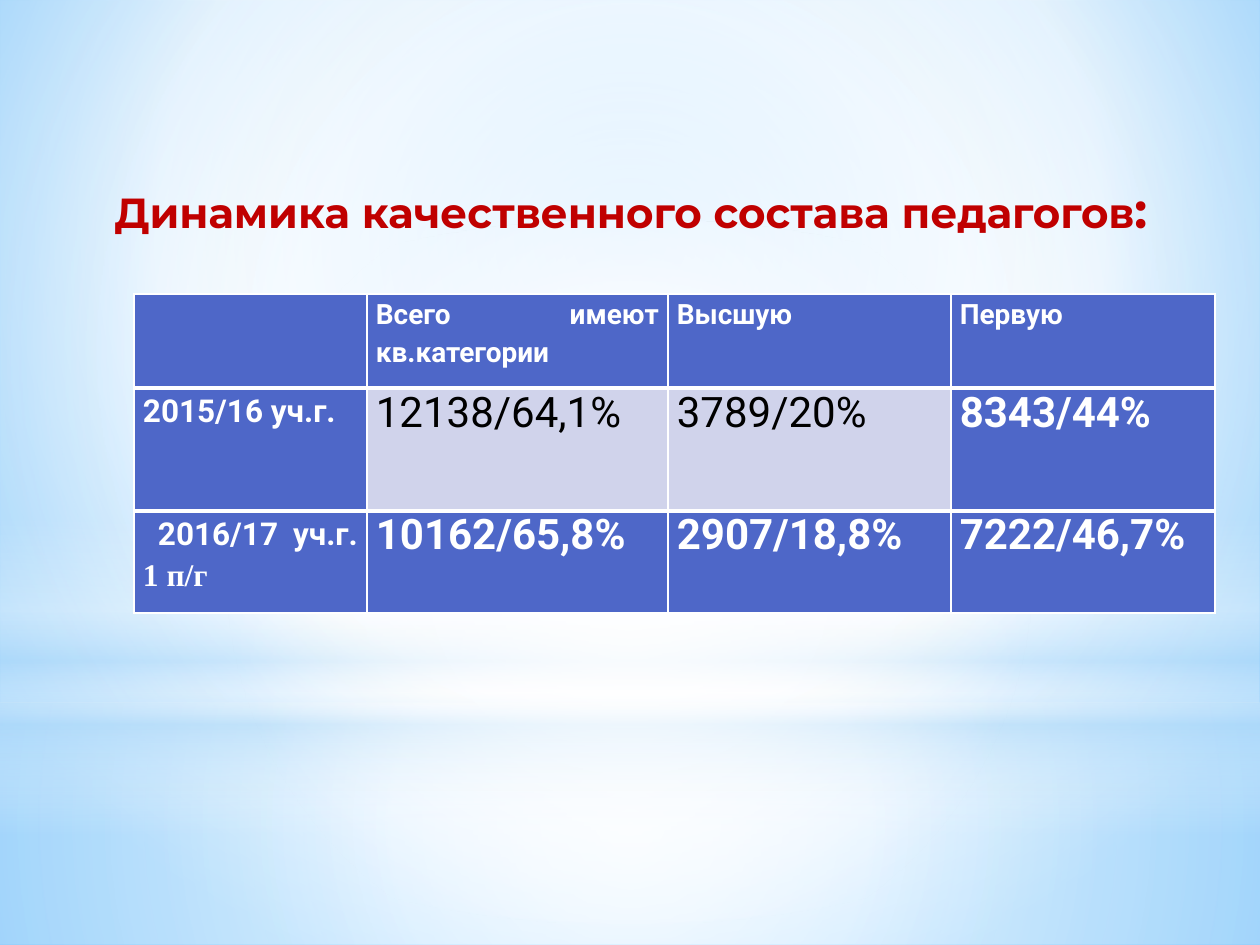
"""Build the slide on the qualification dynamics of teaching staff."""
from typing import NamedTuple, Optional

from lxml import etree
from pptx import Presentation
from pptx import util as u
from pptx.dml.color import RGBColor
from pptx.enum import shapes, text
from pptx.oxml.ns import qn

PX = 914400 / 126
WHITE = RGBColor(0xFF, 0xFF, 0xFF)
BLACK = RGBColor(0, 0, 0)
RED = RGBColor(0xC0, 0, 0)
INDIGO = RGBColor(0x4E, 0x67, 0xC8)
LILAC = RGBColor(0xD0, 0xD3, 0xEB)
PALE = RGBColor(0xB4, 0xDC, 0xFA)
SKY = RGBColor(0x9E, 0xD5, 0xFF)
AZURE = RGBColor(0x5B, 0xB9, 0xFF)
RECT = shapes.MSO_SHAPE.RECTANGLE
OVAL = shapes.MSO_SHAPE.OVAL
CENTRE = (50, 50, 50, 50)


class Stop(NamedTuple):
    pos: int
    color: RGBColor
    alpha: int = 100


class Glow(NamedTuple):
    kind: shapes.MSO_SHAPE
    top: int
    height: int
    stops: list[Stop]
    focus: Optional[tuple[int, int, int, int]] = CENTRE


class Run(NamedTuple):
    words: str
    size: int
    color: RGBColor = WHITE
    bold: bool = True
    font: str = "Roboto"


class Cell(NamedTuple):
    runs: list[Run]
    fill: RGBColor = INDIGO
    label: bool = False


BACKDROP = [Stop(0, SKY), Stop(60, WHITE), Stop(100, AZURE)]
GLOWS = [
    Glow(RECT, 703, 242, [Stop(0, WHITE, 91), Stop(37, WHITE, 76), Stop(100, PALE, 79)]),
    Glow(RECT, 0, 703, [Stop(0, WHITE, 89), Stop(48, WHITE, 62), Stop(100, PALE, 79)]),
    Glow(RECT, 519, 315, [Stop(0, WHITE, 0), Stop(29, WHITE, 30), Stop(45, PALE, 40),
                          Stop(55, WHITE, 26), Stop(65, PALE, 60), Stop(100, WHITE, 0)], None),
    Glow(OVAL, 220, 703, [Stop(0, WHITE), Stop(56, WHITE, 0)]),
]
TITLE = [Run("Динамика качественного состава педагогов", 24, RED, font="Montserrat"),
         Run(":", 28, RED, font="Montserrat")]
COLS = [233, 301, 283, 264]
ROWS = [94, 123, 102]


def header(words: str) -> Cell:
    return Cell([Run(words, 16)], label=True)


def value(words: str, pale: bool = False) -> Cell:
    if pale:
        return Cell([Run(words, 24, BLACK, False)], LILAC)
    return Cell([Run(words, 24)])


CELLS = [
    [Cell([]), header("Всего имеют кв.категории"), header("Высшую"), header("Первую")],
    [Cell([Run("2015/16 уч.г.", 18)], label=True),
     value("12138/64,1%", True), value("3789/20%", True), value("8343/44%")],
    [Cell([Run(" 2016/17 уч.г. ", 18), Run("1 п/г", 18, font="Times New Roman")], label=True),
     value("10162/65,8%"), value("2907/18,8%"), value("7222/46,7%")],
]


def emu(px: int) -> u.Emu:
    return u.Emu(round(px * PX))


def add(parent, tag: str, **attrs):
    return etree.SubElement(parent, qn(tag), {k: str(v) for k, v in attrs.items()})


def paint_gradient(owner, stops: list[Stop], focus) -> None:
    solid = owner.find(qn("a:solidFill"))
    grad = etree.Element(qn("a:gradFill"), rotWithShape="1")
    gs_list = add(grad, "a:gsLst")
    for stop in stops:
        gs = add(gs_list, "a:gs", pos=stop.pos * 1000)
        color = add(gs, "a:srgbClr", val=stop.color)
        if stop.alpha < 100:
            add(color, "a:alpha", val=stop.alpha * 1000)
    if focus:
        circle = add(grad, "a:path", **{"path": "circle"})
        add(circle, "a:fillToRect", **{side: v * 1000 for side, v in zip("ltrb", focus)})
    else:
        add(grad, "a:lin", ang=5400000, scaled=0)
    owner.replace(solid, grad)


def draw_glow(s, glow: Glow) -> None:
    sp = s.shapes.add_shape(glow.kind, 0, emu(glow.top), emu(1260), emu(glow.height))
    sp.shadow.inherit = False
    sp.line.fill.background()
    sp.fill.solid()
    paint_gradient(sp._element.spPr, glow.stops, glow.focus)


def write(p, runs: list[Run]) -> None:
    for run in runs:
        r = p.add_run()
        r.text = run.words
        r.font.name = run.font
        r.font.size = u.Pt(run.size)
        r.font.bold = run.bold
        r.font.color.rgb = run.color


def space(p, align, after: int) -> None:
    p.alignment = align
    p.line_spacing = 1.15
    p.space_after = u.Pt(after)


def draw_title(s) -> None:
    tf = s.shapes.add_textbox(emu(64), emu(165), emu(1134), emu(624)).text_frame
    tf.word_wrap = True
    space(tf.paragraphs[0], text.PP_ALIGN.CENTER, 3)
    write(tf.paragraphs[0], TITLE)


def draw_cell(target, cell: Cell, row: int) -> None:
    target.margin_left = target.margin_right = emu(9)
    target.margin_top = target.margin_bottom = 0
    widths = {"L": 1, "R": 1, "T": 3 if row else 1, "B": 3 if row < len(ROWS) - 1 else 1}
    for side, width in widths.items():
        ln = add(target._tc.get_or_add_tcPr(), f"a:ln{side}", w=u.Pt(width))
        add(add(ln, "a:solidFill"), "a:srgbClr", val=WHITE)
    target.fill.solid()
    target.fill.fore_color.rgb = cell.fill
    p = target.text_frame.paragraphs[0]
    if cell.label:
        space(p, text.PP_ALIGN.JUSTIFY, 10)
    write(p, cell.runs)


def draw_table(s) -> None:
    frame = s.shapes.add_table(len(ROWS), len(COLS), emu(134), emu(294),
                               emu(sum(COLS)), emu(sum(ROWS)))
    table = frame.table
    for col, width in zip(table.columns, COLS):
        col.width = emu(width)
    for i, height in enumerate(ROWS):
        table.rows[i].height = emu(height)
        for j, cell in enumerate(CELLS[i]):
            draw_cell(table.cell(i, j), cell, i)


def main() -> None:
    prs = Presentation()
    prs.slide_width, prs.slide_height = emu(1260), emu(945)
    s = prs.slides.add_slide(prs.slide_layouts[6])
    s.background.fill.solid()
    paint_gradient(s._element.find(".//" + qn("p:bgPr")), BACKDROP, (20, 10, 20, 60))
    for glow in GLOWS:
        draw_glow(s, glow)
    draw_title(s)
    draw_table(s)
    prs.save("out.pptx")


if __name__ == "__main__":
    main()
